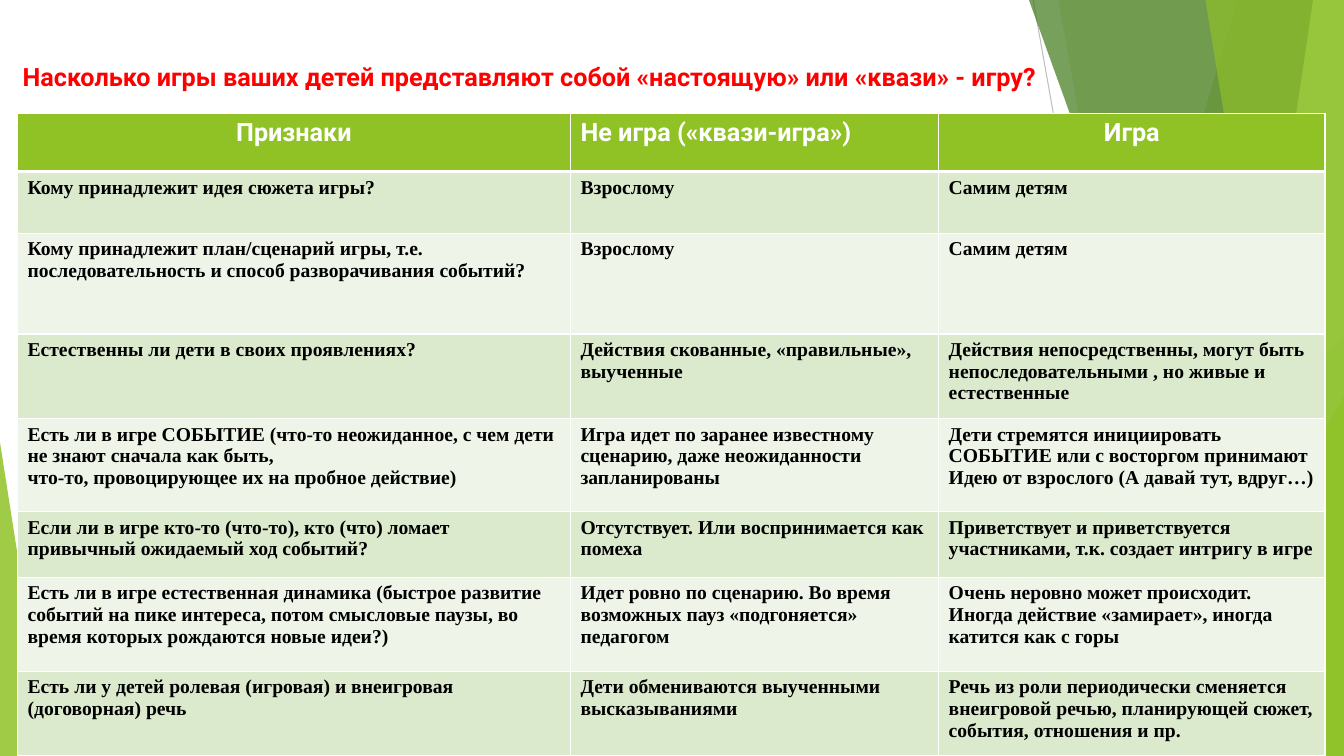
from lxml.etree import SubElement
from pptx import Presentation
from pptx.dml.color import RGBColor
from pptx.enum.shapes import MSO_CONNECTOR, MSO_SHAPE
from pptx.enum.text import MSO_ANCHOR, MSO_AUTO_SIZE, PP_ALIGN
from pptx.oxml.ns import qn
from pptx.util import Pt

WIDE, HIGH = 960, 540
GREEN = "90C226"
HEAD = ["Признаки", "Не игра («квази-игра»)", "Игра"]
ROWS = [
    ["Кому принадлежит идея сюжета игры?", "Взрослому", "Самим детям"],
    ["Кому принадлежит план/сценарий игры, т.е. последовательность и способ разворачивания событий?",
     "Взрослому", "Самим детям"],
    ["Естественны ли дети в своих проявлениях?",
     "Действия скованные, «правильные», выученные",
     "Действия непосредственны, могут быть непоследовательными , но живые и естественные"],
    ["Есть ли в игре СОБЫТИЕ (что-то неожиданное, с чем дети не знают сначала как быть,\n"
     "что-то, провоцирующее их на пробное действие)",
     "Игра идет по заранее известному сценарию, даже неожиданности запланированы",
     "Дети стремятся инициировать СОБЫТИЕ или с восторгом принимают\n"
     "Идею от взрослого (А давай тут, вдруг…)"],
    ["Если ли в игре кто-то (что-то), кто (что) ломает привычный ожидаемый ход событий?",
     "Отсутствует. Или воспринимается как помеха",
     "Приветствует и приветствуется участниками, т.к. создает интригу в игре"],
    ["Есть ли в игре естественная динамика (быстрое развитие событий на пике интереса, "
     "потом смысловые паузы, во время которых рождаются новые идеи?)",
     "Идет ровно по сценарию. Во время возможных пауз «подгоняется» педагогом",
     "Очень неровно может происходит. Иногда действие «замирает», иногда катится как с горы"],
    ["Есть ли у детей ролевая (игровая) и внеигровая (договорная) речь",
     "Дети обмениваются выученными высказываниями",
     "Речь из роли периодически сменяется внеигровой речью, планирующей сюжет, события, отношения и пр."],
]


def color(code):
    return RGBColor.from_string(code)


class Deck:
    sans = "Roboto"
    serif = "Times New Roman"
    bands = ["DBE9CD", "EEF4E8"]

    def __init__(self):
        self.show = Presentation()
        self.show.slide_width = Pt(WIDE)
        self.show.slide_height = Pt(HIGH)
        self.slide = self.show.slides.add_slide(self.show.slide_layouts[5])
        self.shapes = self.slide.shapes

    def line(self, start, end, code):
        wire = self.shapes.add_connector(
            MSO_CONNECTOR.STRAIGHT, *[Pt(v) for v in (*start, *end)])
        wire.line.color.rgb = color(code)
        wire.line.width = Pt(0.75)
        SubElement(wire._element.spPr, qn("a:effectLst"))

    def paint(self, shape, code, alpha):
        shape.shadow.inherit = False
        shape.line.fill.background()
        shape.fill.solid()
        shape.fill.fore_color.rgb = color(code)
        tint = shape._element.spPr.find(qn("a:solidFill"))[0]
        SubElement(tint, qn("a:alpha"), val=str(alpha * 1000))

    def shard(self, top, foot, code, alpha):
        pen = self.shapes.build_freeform(Pt(top), 0)
        pen.add_line_segments(
            [(Pt(x), Pt(y)) for x, y in [(WIDE, 0), (WIDE, HIGH), (foot, HIGH)]])
        self.paint(pen.convert_to_shape(), code, alpha)

    def wedge(self, left, top, width, tip, code, alpha):
        shape = self.shapes.add_shape(
            MSO_SHAPE.ISOSCELES_TRIANGLE, Pt(left), Pt(top), Pt(width), Pt(HIGH - top))
        shape.adjustments[0] = tip
        self.paint(shape, code, alpha)

    def title(self, text):
        box = self.shapes.title
        box.left, box.top, box.width, box.height = 0, Pt(22.5), Pt(790), Pt(79)
        self.shapes._spTree.append(box._element)
        frame = box.text_frame
        frame.word_wrap = True
        frame.auto_size = MSO_AUTO_SIZE.NONE
        frame.vertical_anchor = MSO_ANCHOR.TOP
        para = frame.paragraphs[0]
        para.alignment = PP_ALIGN.LEFT
        para.font.name = self.sans
        for part, size, code, bold in [(" ", 36, GREEN, False), (text, 18, "FF0000", True)]:
            run = para.add_run()
            run.text = part
            run.font.size = Pt(size)
            run.font.bold = bold
            run.font.color.rgb = color(code)

    def edge(self, cell, side, width):
        line = SubElement(cell._tc.get_or_add_tcPr(), qn("a:ln" + side), w=str(Pt(width)))
        SubElement(SubElement(line, qn("a:solidFill")), qn("a:srgbClr"), val="FFFFFF")

    def cell(self, cell, text, row, align):
        for side in "LRTB":
            thick = (row, side) in [(0, "B"), (1, "T")]
            self.edge(cell, side, 3 if thick else 1)
        cell.fill.solid()
        cell.fill.fore_color.rgb = color(self.bands[(row - 1) % 2] if row else GREEN)
        cell.text = text
        for para in cell.text_frame.paragraphs:
            para.alignment = align
            para.font.name = self.serif if row else self.sans
            para.font.size = Pt(14 if row else 18)
            para.font.bold = True
            para.font.color.rgb = color("000000" if row else "FFFFFF")

    def table(self, left, top, wides, highs, rows):
        grid = self.shapes.add_table(
            len(highs), len(wides), Pt(left), Pt(top), Pt(sum(wides)), Pt(sum(highs))).table
        for col, wide in zip(grid.columns, wides):
            col.width = Pt(wide)
        for r, (high, texts) in enumerate(zip(highs, rows)):
            grid.rows[r].height = Pt(high)
            for c, text in enumerate(texts):
                mid = r == 0 and c != 1
                self.cell(grid.cell(r, c), text, r, PP_ALIGN.CENTER if mid else PP_ALIGN.LEFT)


def main():
    deck = Deck()
    deck.line((738, 0), (834, HIGH), "BFBFBF")
    deck.line((WIDE, 290), (584.5, HIGH), "D9D9D9")
    deck.shard(884, 723, GREEN, 30)
    deck.shard(756, 852, GREEN, 20)
    deck.wedge(703.5, 240, 256.5, 1, "54A021", 72)
    deck.shard(735, 929.5, "3F7819", 70)
    deck.shard(938, 858, "C0E474", 70)
    deck.shard(861, 949, GREEN, 65)
    deck.wedge(816.5, 283, 143.5, 1, GREEN, 80)
    deck.wedge(0, 316, 35, 0, GREEN, 85)
    deck.title("Насколько игры ваших детей представляют собой «настоящую» или «квази» - игру?")
    deck.table(12.5, 81, [395, 263, 276],
               [41.5, 44, 72, 60.5, 66.5, 47, 67, 60.5], [HEAD, *ROWS])
    deck.show.save("out.pptx")


if __name__ == "__main__":
    main()
